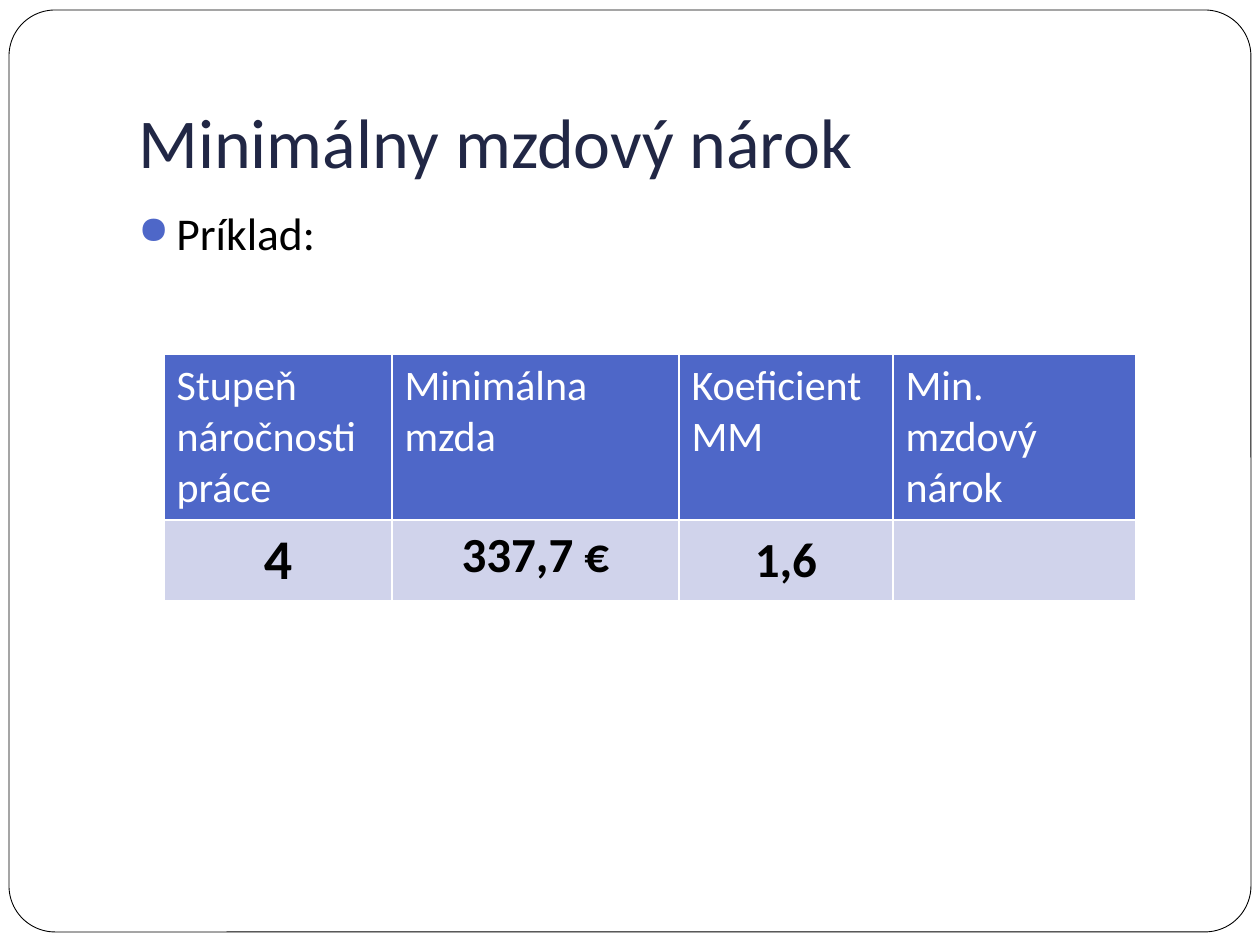
from lxml.etree import SubElement
from pptx import Presentation
from pptx.dml.color import RGBColor
from pptx.enum.shapes import MSO_SHAPE as Shape
from pptx.enum.text import MSO_ANCHOR as Anchor, PP_ALIGN as Align
from pptx.oxml.ns import qn
from pptx.util import Pt

EMU_PER_PX = 914400 / 126
ACCENT, PALE, NAVY, WHITE, BLACK = "4E67C8", "D0D3EB", "212745", "FFFFFF", "000000"


def px(*lengths):
    return [round(length * EMU_PER_PX) for length in lengths]


def color(value):
    return RGBColor.from_string(value)


class SlideBuilder:
    """Draws styled elements on the current slide."""

    font = "Calibri"

    def __init__(self, slide):
        self.slide = slide

    def style(self, paragraph, size, ink, bold=False):
        for run in paragraph.runs:
            run.font.name = self.font
            run.font.size = Pt(size)
            run.font.bold = bold
            run.font.color.rgb = color(ink)

    def frame(self, box, corner):
        border = self.slide.shapes.add_shape(Shape.ROUNDED_RECTANGLE, *px(*box))
        border.adjustments[0] = corner
        border.shadow.inherit = False
        border.fill.solid()
        border.fill.fore_color.rgb = color(WHITE)
        border.line.color.rgb = color(BLACK)
        border.line.width = Pt(0.5)

    def text(self, box, words, size, ink, anchor=Anchor.TOP, bottom_inset=6):
        frame = self.slide.shapes.add_textbox(*px(*box)).text_frame
        frame.word_wrap = True
        frame.vertical_anchor = anchor
        frame.margin_bottom, = px(bottom_inset)
        frame.text = words
        paragraph = frame.paragraphs[0]
        self.style(paragraph, size, ink)
        return paragraph

    def bullet(self, box, words, size, ink, indent):
        paragraph = self.text(box, words, size, ink)
        paragraph.space_before = Pt(5.8)
        props = paragraph._p.get_or_add_pPr()
        hang, = px(indent)
        props.set("marL", str(hang))
        props.set("indent", str(-hang))
        SubElement(SubElement(props, qn("a:buClr")), qn("a:srgbClr"), val=ACCENT)
        SubElement(props, qn("a:buSzPct"), val="85000")
        SubElement(props, qn("a:buChar"), char="●")

    def table(self, left, top, widths, heights):
        box = px(left, top, sum(widths), sum(heights))
        table = self.slide.shapes.add_table(len(heights), len(widths), *box).table
        for column, width in zip(table.columns, px(*widths)):
            column.width = width
        for row, height in zip(table.rows, px(*heights)):
            row.height = height
        return table

    def cell(self, cell, words, size, ink, fill, bold=False, align=Align.LEFT, anchor=Anchor.TOP):
        cell.text = words
        cell.vertical_anchor = anchor
        paragraph = cell.text_frame.paragraphs[0]
        paragraph.alignment = align
        self.style(paragraph, size, ink, bold)
        props = cell._tc.get_or_add_tcPr()
        for side in ("lnL", "lnR", "lnT", "lnB"):
            edge = SubElement(props, qn(f"a:{side}"), w=str(Pt(1)))
            SubElement(SubElement(edge, qn("a:solidFill")), qn("a:srgbClr"), val=WHITE)
        cell.fill.solid()
        cell.fill.fore_color.rgb = color(fill)


def main():
    deck = Presentation()
    deck.slide_width, deck.slide_height = px(1260, 945)
    builder = SlideBuilder(deck.slides.add_slide(deck.slide_layouts[6]))

    builder.frame((9, 10, 1242, 922), 0.05)
    builder.text((126, 38, 1071, 157), "Minimálny mzdový nárok", 40, NAVY, Anchor.BOTTOM, 13)
    builder.bullet((126, 199, 1071, 94), "Príklad:", 26, BLACK, 38)

    wage_table = builder.table(164, 354, (228, 287, 214, 243), (166, 81))
    headings = ("Stupeň náročnosti práce", "Minimálna mzda", "Koeficient MM", "Min. mzdový nárok")
    example = (("4", 32, Anchor.TOP), ("337,7 €", 28, Anchor.TOP),
               ("1,6", 28, Anchor.MIDDLE), ("", 28, Anchor.TOP))
    for column, (heading, (value, size, anchor)) in enumerate(zip(headings, example)):
        builder.cell(wage_table.cell(0, column), heading, 24, WHITE, ACCENT)
        builder.cell(wage_table.cell(1, column), value, size, BLACK, PALE, True, Align.CENTER, anchor)

    deck.save("out.pptx")


if __name__ == "__main__":
    main()
